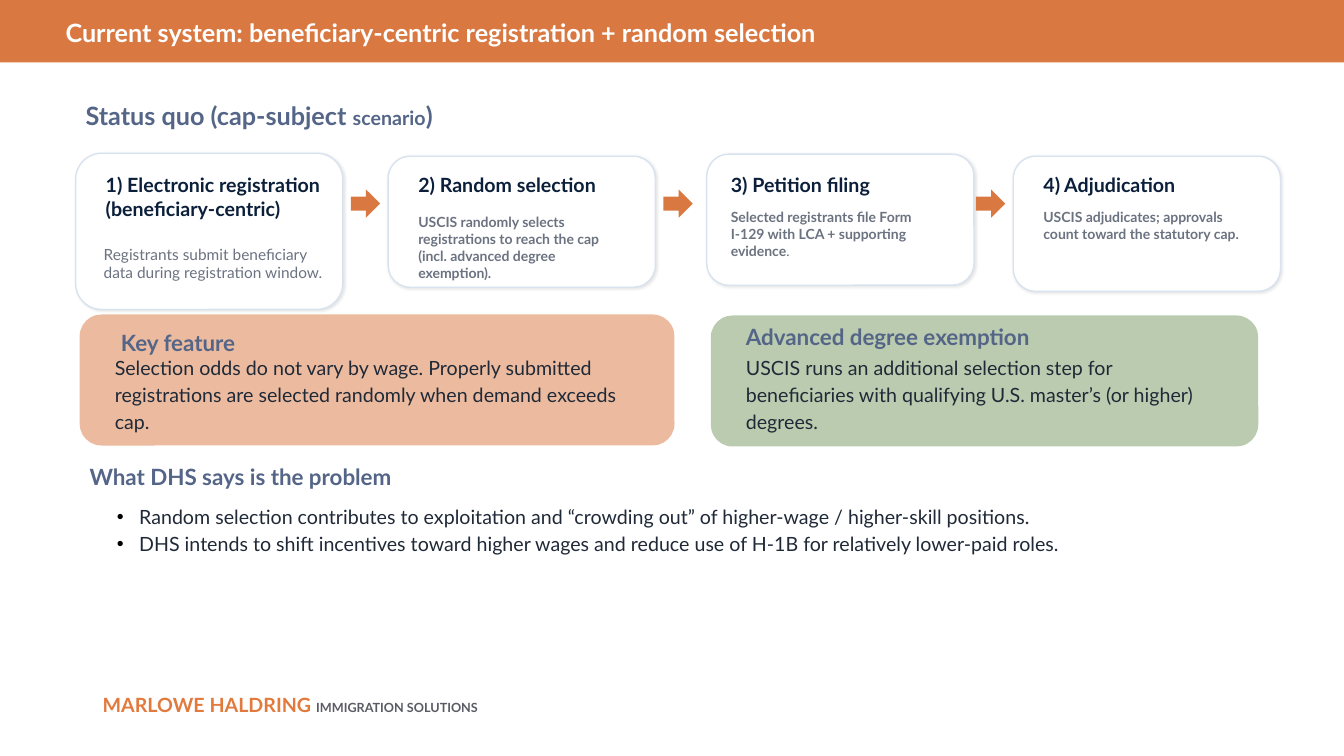
from lxml import etree
from pptx import Presentation
from pptx.dml.color import RGBColor
from pptx.enum.shapes import MSO_SHAPE
from pptx.enum.text import MSO_ANCHOR, MSO_AUTO_SIZE, PP_ALIGN
from pptx.oxml import parse_xml
from pptx.oxml.ns import qn
from pptx.util import Inches, Pt

RECT = MSO_SHAPE.RECTANGLE
ROUNDED = MSO_SHAPE.ROUNDED_RECTANGLE
ARROW = MSO_SHAPE.RIGHT_ARROW
TOP = MSO_ANCHOR.TOP
MIDDLE = MSO_ANCHOR.MIDDLE
LEFT = PP_ALIGN.LEFT
NO_AUTOFIT = MSO_AUTO_SIZE.NONE

ORANGE = RGBColor(0xDA, 0x78, 0x41)
GREEN = RGBColor(0x79, 0x98, 0x61)
WHITE = RGBColor(0xFF, 0xFF, 0xFF)
SLATE = RGBColor(0x54, 0x65, 0x87)
NAVY = RGBColor(0x0B, 0x1F, 0x3A)
GRAY = RGBColor(0x6B, 0x72, 0x80)
INK = RGBColor(0x1F, 0x29, 0x37)
CARD_LINE = RGBColor(0xD9, 0xE2, 0xEF)
FIRM_ORANGE = RGBColor(0xE2, 0x7A, 0x3D)
FIRM_GRAY = RGBColor(0x5A, 0x5B, 0x64)

DRAWING_NS = "http://schemas.openxmlformats.org/drawingml/2006/main"
CARD_SHADOW = (
    f'<a:effectLst xmlns:a="{DRAWING_NS}">'
    '<a:outerShdw blurRad="25400" dist="12700" dir="2700000" algn="tl" rotWithShape="0">'
    '<a:srgbClr val="000000"><a:alpha val="10000"/></a:srgbClr>'
    "</a:outerShdw></a:effectLst>"
)

prs = Presentation()
prs.slide_width = Inches(13.33)
prs.slide_height = Inches(7.5)
slide = prs.slides.add_slide(prs.slide_layouts[1])
shapes = slide.shapes


def write(text, box=None, frame=None, paragraph=None, size=14, color=INK,
          bold=False, anchor=TOP, spacing=None):
    if box:
        frame = shapes.add_textbox(*map(Inches, box)).text_frame
    if frame:
        frame.word_wrap = True
        frame.auto_size = NO_AUTOFIT
        frame.vertical_anchor = anchor
    for index, line in enumerate(text.split("\n")):
        if frame:
            paragraph = frame.paragraphs[0] if index == 0 else frame.add_paragraph()
            paragraph.alignment = LEFT
            paragraph.space_before = Pt(0)
            paragraph.line_spacing = spacing
        run = paragraph.add_run()
        run.text = line
        run.font.name = "Lato"
        run.font.size = Pt(size)
        run.font.bold = bold
        run.font.color.rgb = color
    return paragraph


def draw(kind, box, fill):
    shape = shapes.add_shape(kind, *map(Inches, box))
    shape.shadow.inherit = False
    shape.fill.solid()
    shape.fill.fore_color.rgb = fill
    shape.line.fill.background()
    return shape


banner = draw(RECT, (0, 0, 13.33, 0.62), ORANGE)
title = shapes.title
title.left, title.top, title.width, title.height = map(Inches, (0.55, 0.14, 12.2, 0.36))
title._element.addprevious(banner._element)
write("Current system: beneficiary‑centric registration + random selection",
      frame=title.text_frame, size=18, color=WHITE, bold=True, anchor=MIDDLE)

heading = write("Status quo (cap‑subject ", box=(0.75, 0.95, 12, 0.4),
                size=18, color=SLATE, bold=True, anchor=MIDDLE)
write("scenario", paragraph=heading, size=14, color=SLATE, bold=True)
write(")", paragraph=heading, size=18, color=SLATE, bold=True)

steps = [
    ((0.75, 1.52, 2.65, 1.55), "1) Electronic registration\n(beneficiary‑centric)",
     (0.95, 1.67, 2.33, 0.82),
     "Registrants submit beneficiary data during registration window.",
     (0.93, 2.38, 2.45, 0.46), 11, False),
    ((3.85, 1.55, 2.65, 1.3), "2) Random selection", (4.05, 1.67, 2.25, 0.42),
     "USCIS randomly selects registrations to reach the cap (incl. advanced degree exemption).",
     (4.05, 2.07, 2.25, 0.79), 10, True),
    ((7.01, 1.53, 2.65, 1.3), "3) Petition filing", (7.15, 1.67, 2.25, 0.42),
     "Selected registrants file Form I‑129 with LCA + supporting evidence",
     (7.15, 2.02, 2.25, 0.74), 10, True),
    ((10.05, 1.55, 2.65, 1.34), "4) Adjudication", (10.25, 1.67, 2.25, 0.42),
     "USCIS adjudicates; approvals count toward the statutory cap.",
     (10.25, 2.02, 2.25, 0.59), 10, True),
]
for index, (card_box, name, name_box, detail, detail_box, size, bold) in enumerate(steps):
    card = draw(ROUNDED, card_box, WHITE)
    card.line.color.rgb = CARD_LINE
    card.line.width = Pt(1)
    properties = card._element.spPr
    properties.replace(properties.find(qn("a:effectLst")), parse_xml(CARD_SHADOW))
    write(name, box=name_box, color=NAVY, bold=bold or index == 0)
    sentence = write(detail, box=detail_box, size=size, color=GRAY, bold=bold)
    if not detail.endswith("."):
        write(".", paragraph=sentence, size=size, color=GRAY)
    if index < len(steps) - 1:
        draw(ARROW, (3.48 + 3.1 * index, 1.88, 0.29, 0.28), ORANGE)

panels = [
    ((0.79, 3.12, 5.9, 1.3), ORANGE, "Key feature", (1.1, 3.23, 5.4, 0.33),
     "Selection odds do not vary by wage. Properly submitted registrations are "
     "selected randomly when demand exceeds cap.", (1.04, 3.45, 5.4, 0.51)),
    ((7.05, 3.13, 5.43, 1.3), GREEN, "Advanced degree exemption", (7.3, 3.11, 4.93, 0.45),
     "USCIS runs an additional selection step for beneficiaries with qualifying "
     "U.S. master’s (or higher) degrees.", (7.3, 3.45, 4.93, 0.55)),
]
for panel_box, fill, name, name_box, detail, detail_box in panels:
    panel = draw(ROUNDED, panel_box, fill)
    fill_color = panel._element.spPr.find(qn("a:solidFill"))[0]
    etree.SubElement(fill_color, qn("a:alpha"), val="50000")
    write(name, box=name_box, size=16, color=SLATE, bold=True, anchor=MIDDLE)
    write(detail, box=detail_box, spacing=1.15)

write("What DHS says is the problem", box=(0.79, 4.45, 12.2, 0.56),
      size=16, color=SLATE, bold=True, anchor=MIDDLE)

problems = slide.placeholders[1]
problems.left, problems.top, problems.width, problems.height = map(
    Inches, (1.06, 4.92, 11.9, 1.99))
write("Random selection contributes to exploitation and “crowding out” of "
      "higher‑wage / higher‑skill positions.\n"
      "DHS intends to shift incentives toward higher wages and reduce use of H‑1B "
      "for relatively lower‑paid roles.",
      frame=problems.text_frame, spacing=1.15)
for problem in problems.text_frame.paragraphs:
    bullet_format = problem._element.get_or_add_pPr()
    bullet_format.set("marL", str(Inches(0.22)))
    bullet_format.set("indent", str(-Inches(0.22)))
    bullet_color = etree.SubElement(bullet_format, qn("a:buClr"))
    etree.SubElement(bullet_color, qn("a:srgbClr"), val="000000")
    etree.SubElement(bullet_format, qn("a:buChar"), char="•")

firm = write("MARLOWE HALDRING ", box=(0.92, 6.83, 6.6, 0.64), color=FIRM_ORANGE, bold=True)
write("IMMIGRATION SOLUTIONS", paragraph=firm, size=9, color=FIRM_GRAY, bold=True)

prs.save("out.pptx")
